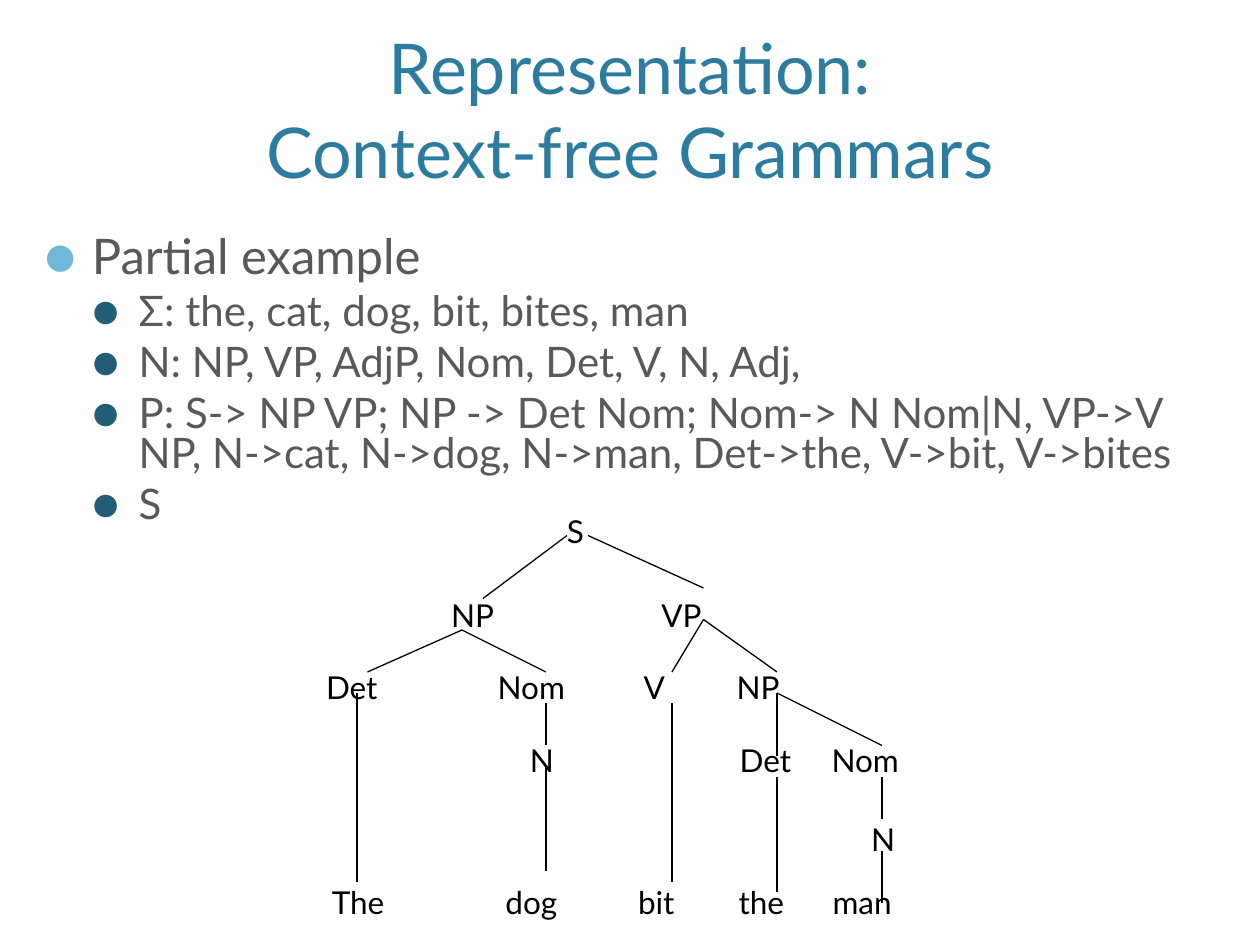
from typing import NamedTuple

from lxml.etree import SubElement
from pptx import Presentation
from pptx.dml.color import RGBColor
from pptx.enum.shapes import MSO_CONNECTOR
from pptx.enum.text import MSO_ANCHOR, MSO_AUTO_SIZE, PP_ALIGN
from pptx.oxml.ns import qn
from pptx.util import Inches, Pt

FONT = "Lato"
WIDE, HIGH = Inches(10), Inches(7.5)
COLS, ROWS = 120, 90
BOX_W, BOX_H = 10, 4.8


class Word(NamedTuple):
    """A tree label: its middle column and top row."""
    text: str
    col: float
    row: float


class Edge(NamedTuple):
    """A tree branch between two grid points."""
    col: float
    row: float
    to_col: float
    to_row: float


class Level(NamedTuple):
    """The look of one list level."""
    size: int
    left: float
    hang: float
    before: int
    dot: str


LEVELS = [Level(28, 0.38, 0.38, 20, "6FB7D7"), Level(24, 0.75, 0.37, 6, "215D77")]
ITEMS = [
    (0, "Partial example"),
    (1, "Σ: the, cat, dog, bit, bites, man"),
    (1, "N: NP, VP, AdjP, Nom, Det, V, N, Adj,"),
    (1, "P: S-> NP VP; NP -> Det Nom; Nom-> N Nom|N, VP->V NP, "
        "N->cat, N->dog, N->man, Det->the, V->bit, V->bites"),
    (1, "S"),
]
TIERS = [
    (48.2, [("S", 54.8)]),
    (56.2, [("NP", 45), ("VP", 64.9)]),
    (63, [("Det", 33.5), ("Nom", 50.6), ("V", 62.3), ("NP", 72.2)]),
    (70, [("N", 51.6), ("Det", 72.9), ("Nom", 82.4)]),
    (77.5, [("N", 84.1)]),
    (83.5, [("The", 34.1), ("dog", 50.6), ("bit", 62.5), ("the", 72.5), ("man", 82.1)]),
]
WORDS = [Word(text, col, row) for row, tier in TIERS for text, col in tier]
EDGES = [
    Edge(54, 51, 46, 57), Edge(56, 51, 67, 56),
    Edge(44, 60, 35, 64), Edge(44, 60, 52, 64),
    Edge(67, 59, 64, 64), Edge(67, 59, 74, 64),
    Edge(34, 66, 34, 84), Edge(52, 67, 52, 71), Edge(52, 73, 52, 83),
    Edge(64, 67, 64, 84), Edge(74, 66, 74, 72), Edge(74, 66, 84, 71),
    Edge(74, 74, 74, 85), Edge(84, 74, 84, 78), Edge(84, 81, 84, 86),
]


def paint(code: str) -> RGBColor:
    """Turn a hex string into a colour."""
    return RGBColor.from_string(code)


def across(col: float) -> int:
    """Give the length of some columns."""
    return round(WIDE * col / COLS)


def down(row: float) -> int:
    """Give the length of some rows."""
    return round(HIGH * row / ROWS)


def place(shape, left: float, top: float, wide: float, high: float) -> None:
    """Put a shape on the grid."""
    shape.left, shape.top = across(left), down(top)
    shape.width, shape.height = across(wide), down(high)


def write(para, text: str, size: int, code: str) -> None:
    """Add one styled run."""
    run = para.add_run()
    run.text = text
    run.font.name, run.font.size = FONT, Pt(size)
    run.font.color.rgb = paint(code)


def bullet(para, look: Level) -> None:
    """Set the indent and dot of a list item."""
    props = para._p.get_or_add_pPr()
    props.set("marL", str(Inches(look.left)))
    props.set("indent", str(-Inches(look.hang)))
    tint = SubElement(props, qn("a:buClr"))
    SubElement(tint, qn("a:srgbClr"), val=look.dot)
    SubElement(props, qn("a:buSzPct"), val="110000")
    SubElement(props, qn("a:buFont"), typeface=FONT)
    SubElement(props, qn("a:buChar"), char="●")


def head(shape) -> None:
    """Fill the title."""
    place(shape, 7.2, 1.44, 105.6, 17.52)
    frame = shape.text_frame
    frame.auto_size = MSO_AUTO_SIZE.NONE
    frame.vertical_anchor = MSO_ANCHOR.BOTTOM
    para = frame.paragraphs[0]
    para.alignment = PP_ALIGN.CENTER
    write(para, "Representation:", 40, "2C7C9F")
    para.add_line_break()
    write(para, "Context-free Grammars", 40, "2C7C9F")


def fill(shape) -> None:
    """Fill the list."""
    place(shape, 3, 21.96, 113, 33.96)
    frame = shape.text_frame
    frame.auto_size = MSO_AUTO_SIZE.NONE
    for spot, (depth, text) in enumerate(ITEMS):
        para = frame.add_paragraph() if spot else frame.paragraphs[0]
        look = LEVELS[depth]
        para.level = depth
        para.line_spacing = 0.8
        para.space_before = Pt(look.before)
        bullet(para, look)
        write(para, text, look.size, "595959")


def label(slide, word: Word) -> None:
    """Draw a tree label."""
    box = slide.shapes.add_textbox(0, 0, 0, 0)
    place(box, word.col - BOX_W / 2, word.row, BOX_W, BOX_H)
    box.text_frame.word_wrap = True
    para = box.text_frame.paragraphs[0]
    para.alignment = PP_ALIGN.CENTER
    write(para, word.text, 18, "000000")


def branch(slide, edge: Edge) -> None:
    """Draw a tree branch."""
    line = slide.shapes.add_connector(
        MSO_CONNECTOR.STRAIGHT, across(edge.col), down(edge.row),
        across(edge.to_col), down(edge.to_row))
    line.line.color.rgb = paint("000000")
    line.line.width = Pt(0.75)
    SubElement(line._element.spPr, qn("a:effectLst"))


def main() -> None:
    """Build and save the slide."""
    deck = Presentation()
    deck.slide_width, deck.slide_height = WIDE, HIGH
    slide = deck.slides.add_slide(deck.slide_layouts[1])
    head(slide.shapes.title)
    fill(slide.placeholders[1])
    for word in WORDS:
        label(slide, word)
    for edge in EDGES:
        branch(slide, edge)
    deck.save("out.pptx")


if __name__ == "__main__":
    main()
